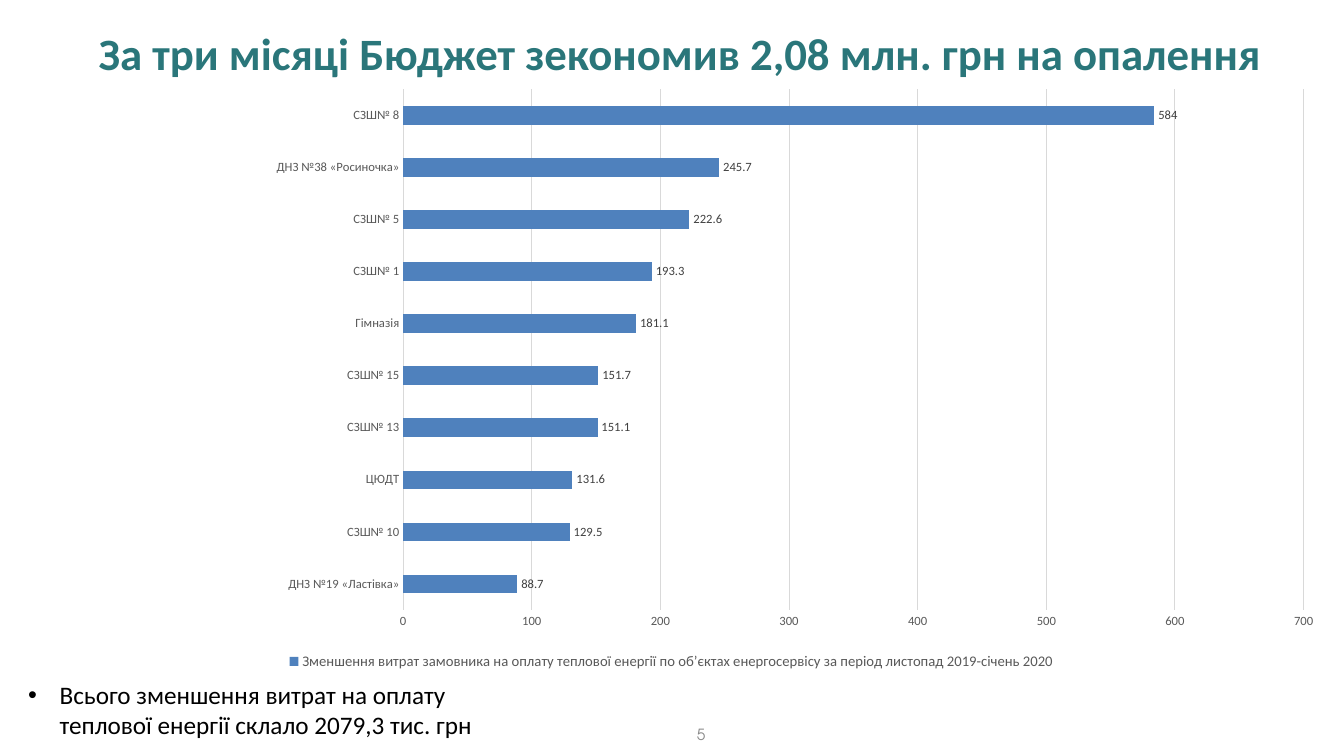
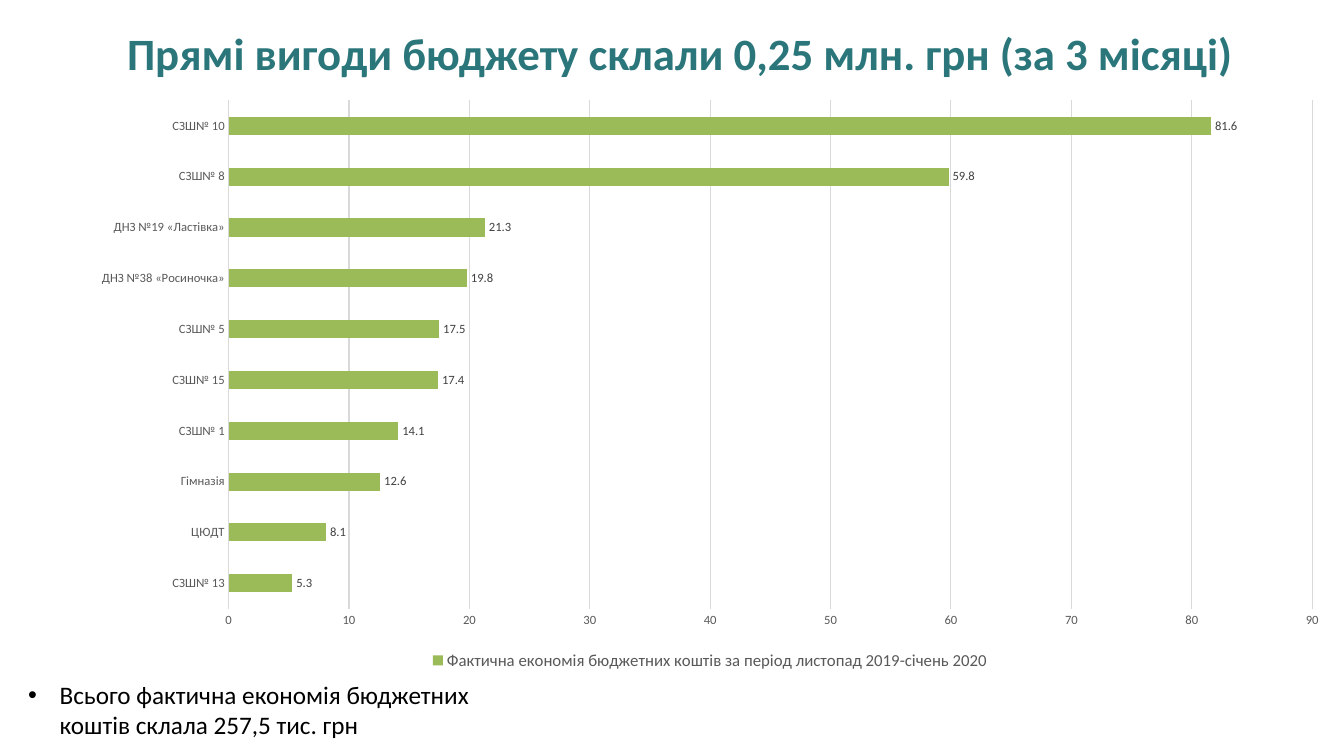
from pptx import Presentation
from pptx.chart.data import CategoryChartData
from pptx.dml.color import RGBColor
from pptx.enum.chart import (XL_CHART_TYPE, XL_LABEL_POSITION as LabelPos,
                             XL_LEGEND_POSITION as LegendPos, XL_TICK_MARK as Tick)
from pptx.enum.text import MSO_ANCHOR as Anchor, MSO_AUTO_SIZE as AutoSize, PP_ALIGN as Align
from pptx.oxml import parse_xml
from pptx.oxml.ns import nsdecls, qn
from pptx.util import Pt

COLORS = {"title": "2A767A", "text": "000000", "number": "898989", "axis": "595959",
          "label": "404040", "grid": "D9D9D9", "costs": "4F81BD", "savings": "9BBB59"}
FONT = "Calibri"
NUMBER_FONT = "TeX Gyre Adventor"

# Boxes: left, top, width, height in points
SLIDE_W, SLIDE_H = 960, 540
TITLE_BOX = (13, 12, 946, 51)
NOTE_BOX = (13, 481.7, 357, 58)
NUMBER_BOX = (416.9, 510.5, 167.8, 28.8)
CHART_TOP, CHART_H = 63.4, 418.3

SLIDES = [
    {
        "title": "За три місяці Бюджет зекономив 2,08 млн. грн на опалення",
        "note": "Всього зменшення витрат на оплату теплової енергії склало 2079,3 тис. грн",
        "number": "5",
        "chart_left": 0,
        "series": "Зменшення витрат замовника на оплату теплової енергії по об’єктах "
                  "енергосервісу за період листопад 2019-січень 2020",
        "color": "costs",
        "legend_size": 10.5,
        "scale": (700, 100),
        "plot": {"x": 0.3, "y": 0, "w": 0.67, "h": 0.89},
        "data": [("ДНЗ №19 «Ластівка»", 88.7), ("СЗШ№ 10", 129.5), ("ЦЮДТ", 131.6),
                 ("СЗШ№ 13", 151.1), ("СЗШ№ 15", 151.7), ("Гімназія", 181.1),
                 ("СЗШ№ 1", 193.3), ("СЗШ№ 5", 222.6), ("ДНЗ №38 «Росиночка»", 245.7),
                 ("СЗШ№ 8", 584)],
    },
    {
        "title": "Прямі вигоди бюджету склали 0,25 млн. грн (за 3 місяці)",
        "note": "Всього фактична економія бюджетних коштів склала 257,5 тис. грн",
        "number": None,
        "chart_left": 54.7,
        "series": "Фактична економія бюджетних коштів за період листопад 2019-січень 2020",
        "color": "savings",
        "legend_size": 12,
        "scale": (90, 10),
        "plot": None,
        "data": [("СЗШ№ 13", 5.3), ("ЦЮДТ", 8.1), ("Гімназія", 12.6), ("СЗШ№ 1", 14.1),
                 ("СЗШ№ 15", 17.4), ("СЗШ№ 5", 17.5), ("ДНЗ №38 «Росиночка»", 19.8),
                 ("ДНЗ №19 «Ластівка»", 21.3), ("СЗШ№ 8", 59.8), ("СЗШ№ 10", 81.6)],
    },
]


def rgb(name):
    return RGBColor.from_string(COLORS[name])


def set_font(font, size, color, name=FONT, bold=False):
    for attr, value in {"size": Pt(size), "name": name, "bold": bold}.items():
        setattr(font, attr, value)
    font.color.rgb = rgb(color)


def fill_text(sp, text, anchor, align, **font):
    tf = sp.text_frame
    for attr, value in {"word_wrap": True, "auto_size": AutoSize.NONE,
                        "vertical_anchor": anchor}.items():
        setattr(tf, attr, value)
    p = tf.paragraphs[0]
    p.alignment = align
    r = p.add_run()
    r.text = text
    set_font(r.font, **font)
    return p


def add_title(s, box, text):
    sp = s.shapes.title
    for attr, value in zip(("left", "top", "width", "height"), box):
        setattr(sp, attr, Pt(value))
    fill_text(sp, text, Anchor.MIDDLE, Align.CENTER, size=32, color="title", bold=True)


def add_note(s, box, text):
    sp = s.shapes.add_textbox(*map(Pt, box))
    p = fill_text(sp, text, Anchor.TOP, Align.LEFT, size=18, color="text")
    # Hanging bullet
    pPr = p._p.get_or_add_pPr()
    indent = Pt(22.5)
    pPr.set("marL", str(indent))
    pPr.set("indent", str(-indent))
    pPr.append(parse_xml(f'<a:buFont {nsdecls("a")} typeface="Arial"/>'))
    pPr.append(parse_xml(f'<a:buChar {nsdecls("a")} char="•"/>'))


def add_number(s, box, text):
    sp = s.shapes.add_textbox(*map(Pt, box))
    fill_text(sp, text, Anchor.MIDDLE, Align.CENTER, size=11, color="number", name=NUMBER_FONT)


def set_plot_box(chart, plot):
    area = chart.element.find(qn("c:chart")).find(qn("c:plotArea"))
    for old in area.findall(qn("c:layout")):
        area.remove(old)
    sizes = "".join(f'<c:{key} val="{value}"/>' for key, value in plot.items())
    area.insert(0, parse_xml(
        f'<c:layout {nsdecls("c")}><c:manualLayout><c:layoutTarget val="inner"/>'
        f'<c:xMode val="edge"/><c:yMode val="edge"/>{sizes}</c:manualLayout></c:layout>'))


def add_bars(s, box, spec_):
    data = CategoryChartData()
    data.categories, values = zip(*spec_["data"])
    data.add_series(spec_["series"], values)
    chart = s.shapes.add_chart(XL_CHART_TYPE.BAR_CLUSTERED, *map(Pt, box), data).chart
    chart.has_title = False
    set_font(chart.font, 10, "text")

    # Bars and value labels
    plot = chart.plots[0]
    plot.gap_width = 182
    plot.vary_by_categories = False
    fill = plot.series[0].format.fill
    fill.solid()
    fill.fore_color.rgb = rgb(spec_["color"])
    plot.has_data_labels = True
    labels = plot.data_labels
    labels.show_value = True
    labels.position = LabelPos.OUTSIDE_END
    set_font(labels.font, 9, "label")

    # Axes and grid
    cat, val = chart.category_axis, chart.value_axis
    for axis in (cat, val):
        axis.major_tick_mark = axis.minor_tick_mark = Tick.NONE
        set_font(axis.tick_labels.font, 9, "axis")
    val.minimum_scale = 0
    val.maximum_scale, val.major_unit = spec_["scale"]
    val.format.line.fill.background()
    val.has_major_gridlines = True
    for line in (cat.format.line, val.major_gridlines.format.line):
        line.color.rgb = rgb("grid")
        line.width = Pt(0.75)

    # Legend
    chart.has_legend = True
    chart.legend.position = LegendPos.BOTTOM
    chart.legend.include_in_layout = False
    set_font(chart.legend.font, spec_["legend_size"], "axis")
    if spec_["plot"]:
        set_plot_box(chart, spec_["plot"])


def add_chart_slide(prs, content):
    s = prs.slides.add_slide(prs.slide_layouts[5])
    add_title(s, TITLE_BOX, content["title"])
    left = content["chart_left"]
    add_bars(s, (left, CHART_TOP, SLIDE_W - left, CHART_H), content)
    add_note(s, NOTE_BOX, content["note"])
    if content["number"]:
        add_number(s, NUMBER_BOX, content["number"])


def main():
    prs = Presentation()
    prs.slide_width, prs.slide_height = Pt(SLIDE_W), Pt(SLIDE_H)
    for content in SLIDES:
        add_chart_slide(prs, content)
    prs.save("out.pptx")


if __name__ == "__main__":
    main()
